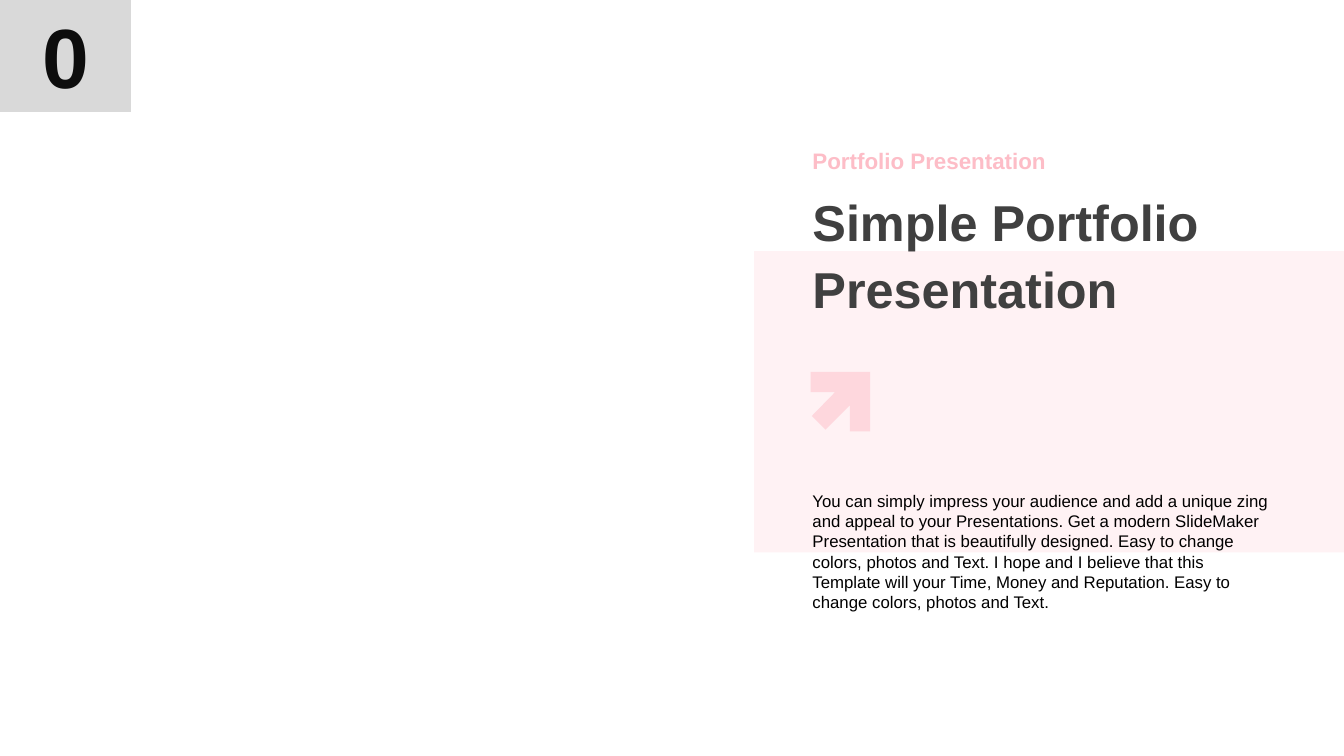
from pptx import Presentation
from pptx.dml.color import RGBColor
from pptx.enum.shapes import MSO_SHAPE
from pptx.enum.text import MSO_ANCHOR, PP_ALIGN
from pptx.util import Inches, Pt

RECTANGLE = MSO_SHAPE.RECTANGLE
TOP, MIDDLE = MSO_ANCHOR.TOP, MSO_ANCHOR.MIDDLE
CENTER = PP_ALIGN.CENTER

BLUSH = RGBColor(0xFF, 0xF2, 0xF4)
ROSE = RGBColor(0xFE, 0xD7, 0xDD)
PINK = RGBColor(0xFD, 0xBD, 0xC7)
CHARCOAL = RGBColor(0x40, 0x40, 0x40)
GREY = RGBColor(0xD9, 0xD9, 0xD9)
INK = RGBColor(0x0D, 0x0D, 0x0D)
BLACK = RGBColor(0, 0, 0)

WIDTH, HEIGHT = 13.33, 7.5
FONT = "Arial"
BODY = (
    "You can simply impress your audience and add a unique zing and appeal to "
    "your Presentations. Get a modern SlideMaker Presentation that is "
    "beautifully designed. Easy to change colors, photos and Text. I hope and I "
    "believe that this Template will your Time, Money and Reputation. Easy to "
    "change colors, photos and Text."
)
# Arrow outline as shares of its square
ARROW = [(0, 0), (1, 0), (1, 1), (0.66, 1), (0.66, 0.56),
         (0.25, 0.97), (0.02, 0.74), (0.41, 0.34), (0, 0.34)]


def paint(shape, color):
    shape.shadow.inherit = False
    shape.fill.solid()
    shape.fill.fore_color.rgb = color
    shape.line.fill.background()


def add_block(slide, box, color):
    block = slide.shapes.add_shape(RECTANGLE, *map(Inches, box))
    paint(block, color)
    return block


def write(shape, text, size, color, bold=False, anchor=TOP):
    frame = shape.text_frame
    frame.word_wrap = True
    frame.vertical_anchor = anchor
    frame.text = text
    paragraph = frame.paragraphs[0]
    font = paragraph.runs[0].font
    font.name, font.size, font.bold = FONT, Pt(size), bold
    font.color.rgb = color
    return paragraph


def add_text(slide, box, *style, **options):
    return write(slide.shapes.add_textbox(*map(Inches, box)), *style, **options)


def add_number(slide, left, top, width, height):
    tile = add_block(slide, (left, top, width, height), GREY)
    frame = tile.text_frame
    frame.margin_left = frame.margin_right = Inches(0.12)
    write(tile, "0", 60, INK, bold=True).alignment = CENTER


def add_arrow(slide, left, top, side):
    corners = [(Inches(left + x * side), Inches(top + y * side)) for x, y in ARROW]
    outline = slide.shapes.build_freeform(*corners[0])
    outline.add_line_segments(corners[1:], close=True)
    paint(outline.convert_to_shape(), ROSE)


def add_intro(slide, left, top, width):
    # Heading
    add_text(slide, (left, top, 3.39, 0.43), "Portfolio Presentation",
             16, PINK, bold=True, anchor=MIDDLE)
    title = add_text(slide, (left, top + 0.46, 4.14, 1.32),
                     "Simple Portfolio Presentation",
                     36, CHARCOAL, bold=True, anchor=MIDDLE)
    title.line_spacing = 1.1
    # Arrow and description
    add_arrow(slide, left + 0.08, top + 2.31, 0.59)
    add_text(slide, (left, top + 3.44, width, 1.31), BODY, 12, BLACK)


def main():
    deck = Presentation()
    deck.slide_width, deck.slide_height = Inches(WIDTH), Inches(HEIGHT)
    slide = deck.slides.add_slide(deck.slide_layouts[6])

    # Tinted band running to the right edge
    band_left = 7.48
    add_block(slide, (band_left, 2.49, WIDTH - band_left, 2.99), BLUSH)
    add_number(slide, 0, 0, 1.3, 1.11)
    add_intro(slide, band_left + 0.48, 1.38, 4.75)

    deck.save("out.pptx")


if __name__ == "__main__":
    main()
